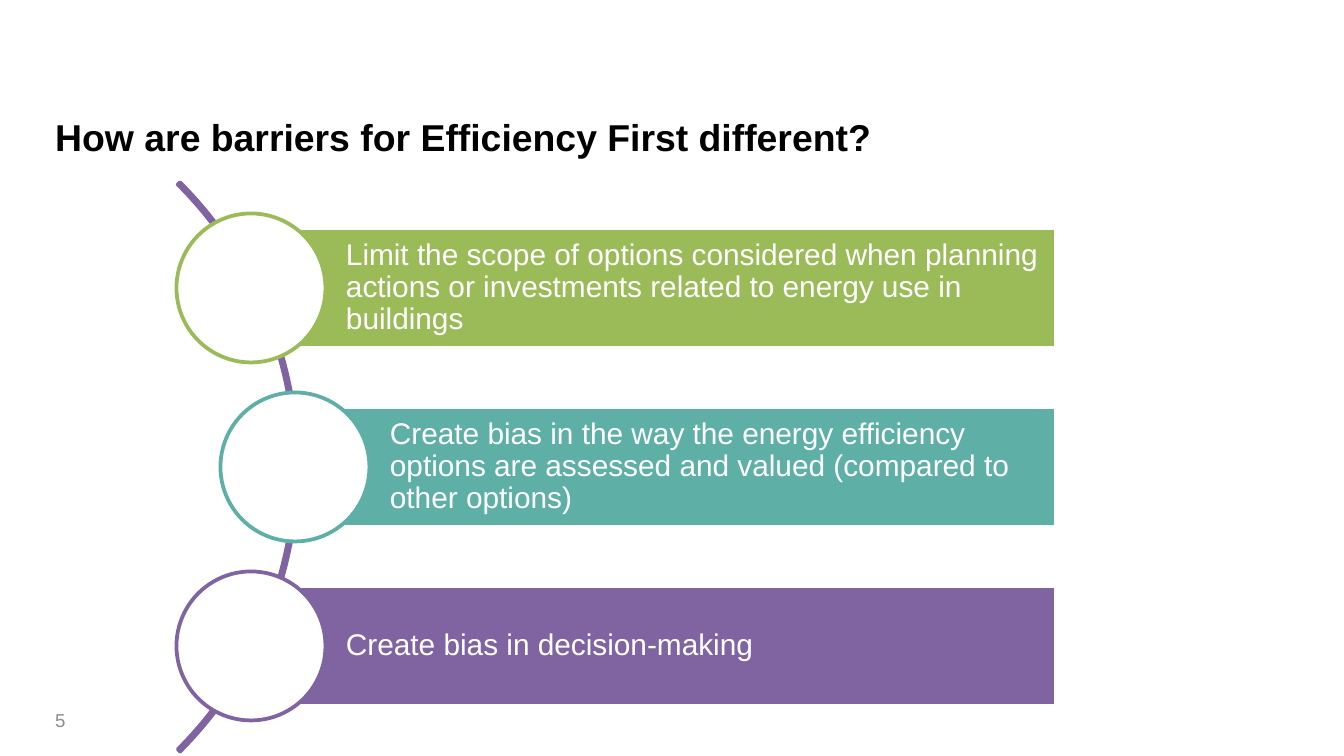
import pptx
import pptx.util
import pptx.dml.color
import pptx.enum.shapes
import pptx.enum.text

# Content: text, colour, left edge of bar (px)
TITLE = "How are barriers for Efficiency First different?"
PAGE = "5"
PURPLE = "8064A2"
ROWS = [
    ("Limit the scope of options considered when planning actions or "
     "investments related to energy use in buildings", "9BBB59", 251),
    ("Create bias in the way the energy efficiency options are assessed "
     "and valued (compared to other options)", "5EAFA6", 295),
    ("Create bias in decision-making", PURPLE, 251),
]

# Layout in px
SCALE = 914400 / 134.4
MID, PITCH = 467, 179
RIGHT, BAR, DISC = 1056, 120, 149
ARC_LEFT, ARC = -507, 805
KIND = pptx.enum.shapes.MSO_SHAPE


def px(n):
    return pptx.util.Emu(round(n * SCALE))


def rgb(code):
    return pptx.dml.color.RGBColor.from_string(code)


def shape(kind, box, fill, line):
    item = slide.shapes.add_shape(kind, *map(px, box))
    item.shadow.inherit = False
    if fill:
        item.fill.solid()
        item.fill.fore_color.rgb = rgb(fill)
    else:
        item.fill.background()
    item.line.color.rgb = rgb(line)
    item.line.width = pptx.util.Pt(2)
    return item


def write(item, text, size, color, bold=False):
    frame = item.text_frame
    frame.text = text
    frame.word_wrap = True
    frame.vertical_anchor = pptx.enum.text.MSO_ANCHOR.MIDDLE
    para = frame.paragraphs[0]
    para.alignment = pptx.enum.text.PP_ALIGN.LEFT
    font = para.runs[0].font
    font.name = "Arial"
    font.size = pptx.util.Pt(size)
    font.bold = bold
    font.color.rgb = rgb(color)
    return frame


deck = pptx.Presentation()
deck.slide_width, deck.slide_height = px(1344), px(756)
slide = deck.slides.add_slide(deck.slide_layouts[6])

# Page number and title
for box, text, size, color, bold in [
    ((42, 700, 133, 40), PAGE, 10, "8C8C8C", False),
    ((42, 85, 890, 103), TITLE, 20, "000000", True),
]:
    write(slide.shapes.add_textbox(*map(px, box)), text, size, color, bold)

# Arc behind the rows
arc = shape(KIND.BLOCK_ARC, (ARC_LEFT, MID - ARC / 2, ARC, ARC), None, PURPLE)
for i, value in enumerate((189, 27, 0.004)):
    arc.adjustments[i] = value

# Bars, each with a disc centred on its left edge
for i, (text, color, left) in enumerate(ROWS):
    y = MID + (i - 1) * PITCH
    bar = shape(KIND.RECTANGLE, (left, y - BAR / 2, RIGHT - left, BAR),
                color, "FFFFFF")
    frame = write(bar, text, 16, "FFFFFF")
    frame.margin_left = px(95)
    frame.margin_top = frame.margin_right = frame.margin_bottom = px(5)
    frame.paragraphs[0].line_spacing = 0.9
    shape(KIND.OVAL, (left - DISC / 2, y - DISC / 2, DISC, DISC),
          "FFFFFF", color)

deck.save("out.pptx")
